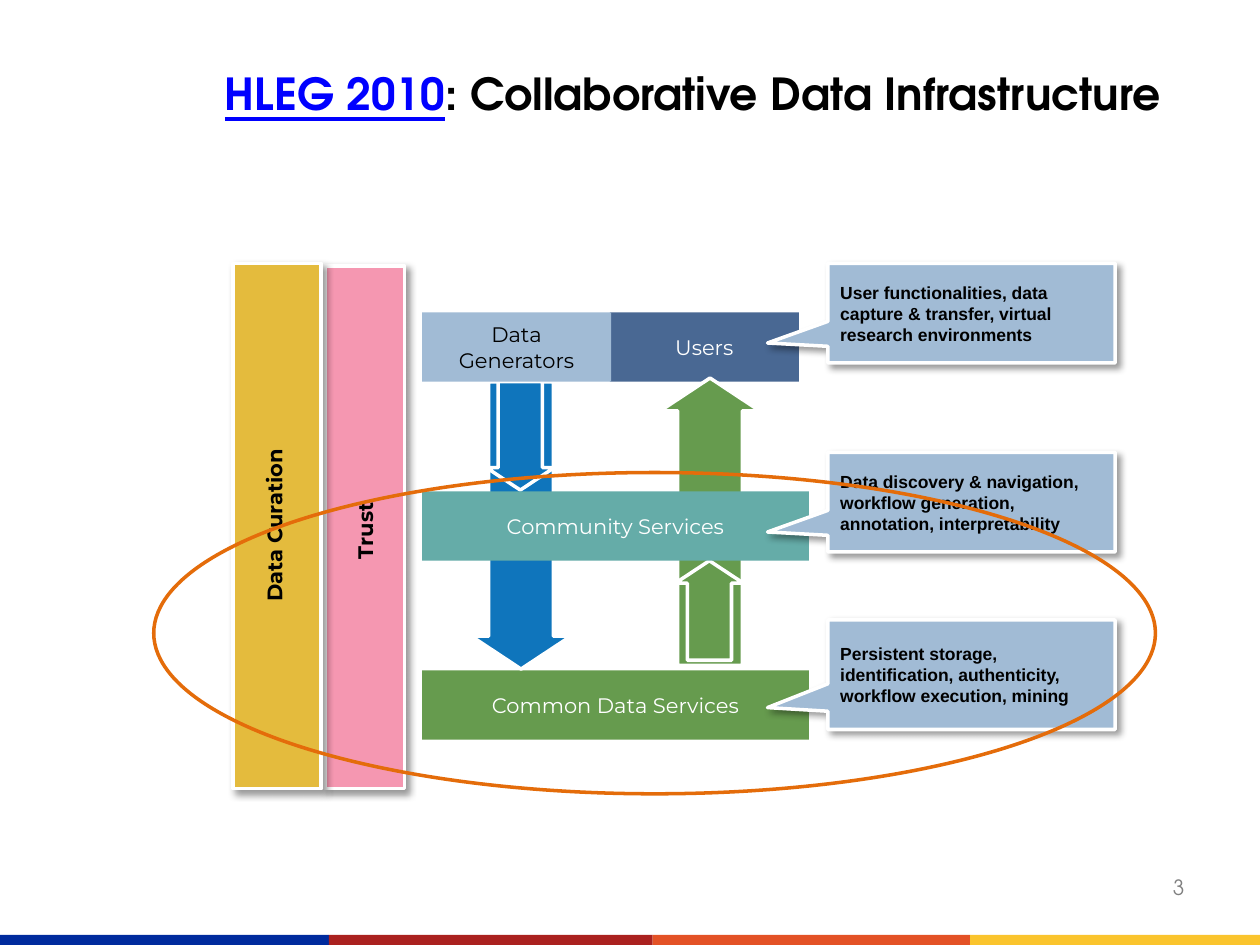
"""Build the collaborative data infrastructure slide."""
import pptx
import pptx.util
import pptx.dml.color
import pptx.enum.shapes
import pptx.enum.text
import lxml.etree

Inches = pptx.util.Inches
Pt = pptx.util.Pt
RGB = pptx.dml.color.RGBColor.from_string
Kind = pptx.enum.shapes.MSO_SHAPE
Align = pptx.enum.text.PP_ALIGN
Anchor = pptx.enum.text.MSO_ANCHOR


class Theme:
    black, white, grey, link = "000000", "FFFFFF", "808080", "0000FF"
    pale, navy, blue = "A1BBD5", "496893", "0F75BC"
    green, teal, gold, pink, ring = "669B4E", "65ACA8", "E4BB3D", "F597B1", "E46C0A"
    strip = ["002B9D", "AA211F", "E35226", "FAC42D"]
    title = {"name": "TeX Gyre Adventor", "size": Pt(25.2), "bold": True}
    label = {"name": "Montserrat", "size": Pt(12), "bold": False}
    side = {"name": "Montserrat", "size": Pt(12), "bold": True}
    note = {"name": "Arial", "size": Pt(10), "bold": True}
    page = {"name": "TeX Gyre Adventor", "size": Pt(12), "bold": False}


def draw(kind, box, fill=None, line=None, shade=False):
    shape = slide.shapes.add_shape(kind, *map(Inches, box))
    shape.shadow.inherit = False
    if fill:
        shape.fill.solid()
        shape.fill.fore_color.rgb = RGB(fill)
    else:
        shape.fill.background()
    if line:
        shape.line.color.rgb = RGB(line)
        shape.line.width = Pt(2)
    else:
        shape.line.fill.background()
    if shade:
        ns = "http://schemas.openxmlformats.org/drawingml/2006/main"
        glow = lxml.etree.fromstring(
            f'<a:outerShdw xmlns:a="{ns}" blurRad="{Pt(4)}" dist="{Pt(3)}" dir="2700000" '
            f'algn="tl" rotWithShape="0"><a:srgbClr val="{Theme.black}">'
            '<a:alpha val="40000"/></a:srgbClr></a:outerShdw>')
        shape._element.spPr.find(f"{{{ns}}}effectLst").append(glow)
    return shape


def write(shape, lines, fmt, align, wrap=True):
    frame = shape.text_frame
    frame.word_wrap = wrap
    frame.vertical_anchor = Anchor.MIDDLE
    for num, parts in enumerate(lines):
        para = frame.add_paragraph() if num else frame.paragraphs[0]
        para.alignment = align
        for text, tint, under in parts:
            run = para.add_run()
            run.text = text
            for key, val in {**fmt, "underline": under}.items():
                setattr(run.font, key, val)
            run.font.color.rgb = RGB(tint)


deck = pptx.Presentation()
deck.slide_width, deck.slide_height = Inches(10), Inches(7.5)
slide = deck.slides.add_slide(deck.slide_layouts[5])

edges = [0, 2.61, 5.18, 7.7, 10]
for left, right, tint in zip(edges, edges[1:], Theme.strip):
    draw(Kind.RECTANGLE, (left, 7.42, right - left, 0.09), tint)

title = slide.shapes.title
place = {"left": 1.5, "top": 0.3, "width": 8, "height": 0.87}
for key, val in place.items():
    setattr(title, key, Inches(val))
write(title, [[("HLEG 2010", Theme.link, True),
               (": Collaborative Data Infrastructure", Theme.black, False)]],
      Theme.title, Align.CENTER)

pillars = [
    ("Trust", (2.58, 2.11, 0.63, 4.15), Theme.pink, (2.55, 4.04, 0.69, 0.3)),
    ("Data Curation", (1.85, 2.09, 0.7, 4.17), Theme.gold, (1.44, 3.99, 1.47, 0.3)),
]
for text, box, fill, spot in pillars:
    draw(Kind.RECTANGLE, box, fill, Theme.white, True)
    label = slide.shapes.add_textbox(*map(Inches, spot))
    label.rotation = 270
    write(label, [[(text, Theme.black, False)]], Theme.side, Align.LEFT, False)

bar, arrow = Kind.RECTANGLE, Kind.DOWN_ARROW
stack = [
    (bar, (3.35, 5.32, 3.07, 0.55), Theme.green, ["Common Data Services"], Theme.white),
    (bar, (4.84, 2.48, 1.5, 0.55), Theme.navy, ["Users"], Theme.white),
    (arrow, (3.74, 3.03, 0.79, 2.28), Theme.blue, [], 0),
    (arrow, (3.86, 3.03, 0.54, 0.86), Theme.blue, [], 0),
    (bar, (3.35, 2.48, 1.5, 0.55), Theme.pale, ["Data", "Generators"], Theme.black),
    (arrow, (5.24, 3, 0.79, 2.28), Theme.green, [], 180),
    (arrow, (5.36, 4.45, 0.54, 0.79), Theme.green, [], 180),
    (bar, (3.35, 3.9, 3.07, 0.55), Theme.teal, ["Community Services"], Theme.white),
]
for kind, box, fill, words, extra in stack:
    if kind == arrow:
        shape = draw(kind, box, fill, Theme.white)
        shape.adjustments[0], shape.adjustments[1] = 0.65, 0.33
        shape.rotation = extra
    else:
        shape = draw(kind, box, fill)
        write(shape, [[(word, extra, False)] for word in words], Theme.label, Align.CENTER)

notes = [
    (2.09, 0.79, "User functionalities, data capture & transfer, virtual research environments"),
    (3.59, 0.79, "Data discovery & navigation, workflow generation, annotation, interpretability"),
    (4.92, 0.87, "Persistent storage, identification, authenticity, workflow execution, mining"),
]
for top, height, text in notes:
    shape = draw(Kind.RECTANGULAR_CALLOUT, (6.57, top, 2.28, height),
                 Theme.pale, Theme.white, True)
    shape.adjustments[0], shape.adjustments[1] = -0.71, 0.3
    write(shape, [[(text, Theme.black, False)]], Theme.note, Align.LEFT)

draw(Kind.OVAL, (1.22, 3.75, 7.95, 2.55), line=Theme.ring)

page = slide.shapes.add_textbox(*map(Inches, (7.17, 6.89, 2.33, 0.4)))
write(page, [[("3", Theme.grey, False)]], Theme.page, Align.RIGHT)
page.text_frame.vertical_anchor = Anchor.TOP

deck.save("out.pptx")
